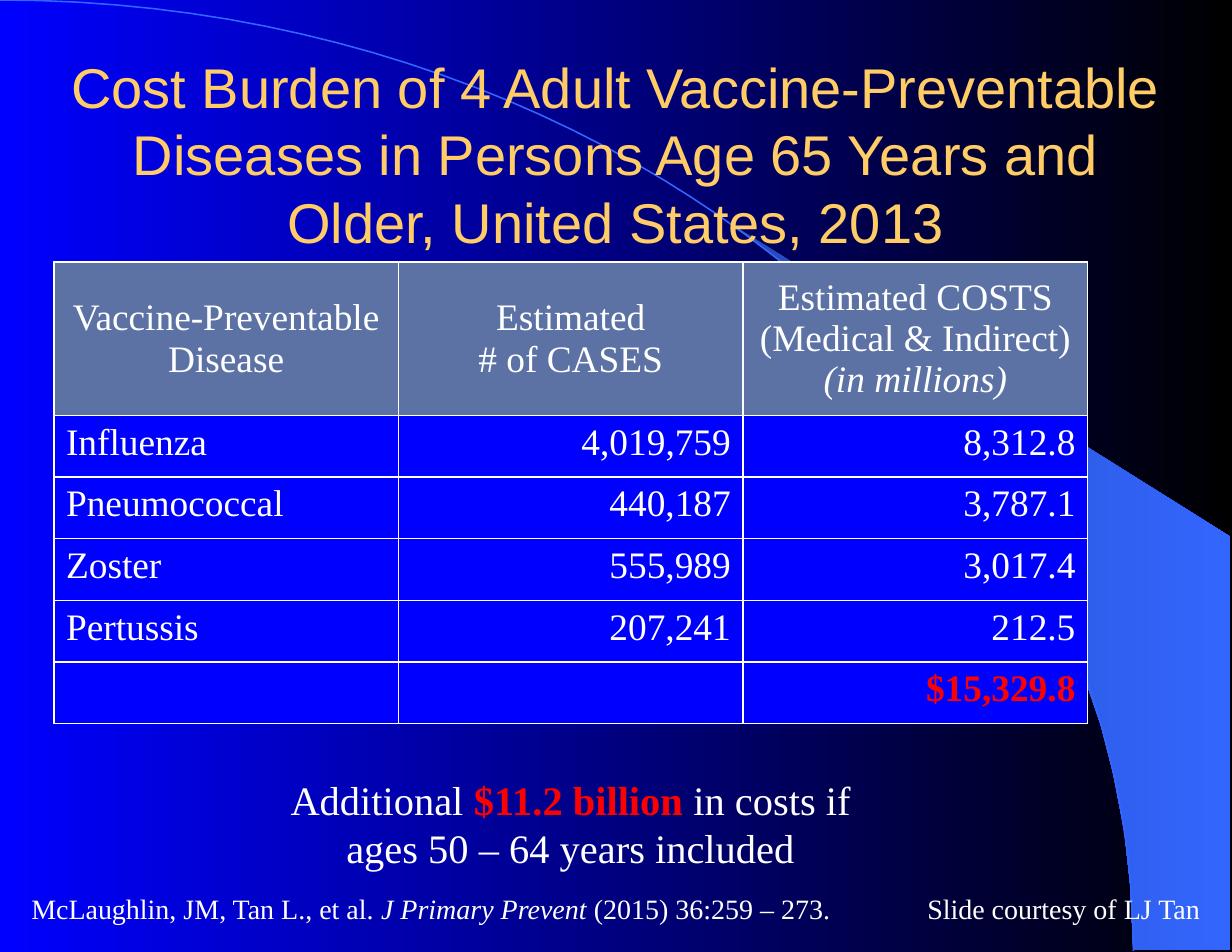
import pptx
import pptx.dml.color
import pptx.enum.text
import pptx.oxml
import pptx.oxml.ns
import pptx.util

Pt = pptx.util.Pt
ALIGN = pptx.enum.text.PP_ALIGN
ANCHOR = pptx.enum.text.MSO_ANCHOR

THEME = {
    "title_font": "Arial", "body_font": "Times New Roman",
    "title_size": 36, "table_size": 24, "note_size": 26, "citation_size": 18,
    "title": "FFCC66", "text": "FFFFFF", "accent": "FF0000", "border": "FFFFFF",
    "header": "5C72A5", "row": "0000FF", "arc": "3366FF",
    "background": ("0000FF", "000000"), "sweep": ("2449B6", "3366FF"),
}
STRONG = {"bold": True, "color": THEME["accent"]}
ITALIC = {"italic": True}

# A paragraph is a list of runs: plain text, or (text, format)
TITLE = [["Cost Burden of 4 Adult Vaccine-Preventable Diseases in Persons "
          "Age 65 Years and Older, United States, 2013"]]
HEADERS = [
    [["Vaccine-Preventable Disease"]],
    [["Estimated"], ["# of CASES"]],
    [["Estimated COSTS"], ["(Medical & Indirect)"], [("(in millions)", ITALIC)]],
]
DISEASES = [
    ("Influenza", "4,019,759", "8,312.8"),
    ("Pneumococcal", "440,187", "3,787.1"),
    ("Zoster", "555,989", "3,017.4"),
    ("Pertussis", "207,241", "212.5"),
]
TOTAL = ("", "", ("$15,329.8", STRONG))
NOTE = [["Additional ", ("$11.2 billion ", STRONG), "in costs if"],
        ["ages 50 – 64 years included"]]
CITATION = [["McLaughlin, JM, Tan L., et al. ", ("J Primary Prevent ", ITALIC),
             "(2015) 36:259 – 273.\tSlide courtesy of LJ Tan"]]

# Places in points
SLIDE_SIZE = (792, 612)
TITLE_BOX = (34.6, 28.8, 722.2, 139.7)
TABLE_BOX = (34.6, 168.5, 664.6, 296.6)
HEADER_HEIGHT, ROW_HEIGHT = 98.6, 39.6
NOTE_BOX = (34.6, 494.6, 664.6, 71.3)
CITATION_BOX = (13, 569.5, 766.8, 28.8)
COURTESY_TAB = 576
INSETS = (7.9, 4.3)
ARC_CONTROLS = [(0, 0), (402.5, 0), (728.6, 273.6), (728.6, 611.3)]
SWEEP_POINTS = [
    (728.6, 610.6), (790.6, 610.6), (790.6, 344.9), (466.6, 141.8),
    (494.6, 162.7), (517, 180.7), (542.9, 203.8), (567.4, 228.2),
    (603.4, 269.3), (635.8, 313.2), (658.8, 351.4), (679.7, 391),
    (695.5, 430.6), (707.8, 466.6), (715.7, 497.5), (722.9, 535),
    (726.5, 568.1),
]


def rgb(value):
    return pptx.dml.color.RGBColor.from_string(value)


def write(frame, paragraphs, *, size, font=THEME["body_font"],
          color=THEME["text"], align=ALIGN.LEFT, tab=None):
    frame.word_wrap = True
    for index, runs in enumerate(paragraphs):
        paragraph = frame.add_paragraph() if index else frame.paragraphs[0]
        paragraph.alignment = align
        if tab:
            properties = paragraph._p.get_or_add_pPr()
            tabs = properties.makeelement(pptx.oxml.ns.qn("a:tabLst"), {})
            stop = tabs.makeelement(pptx.oxml.ns.qn("a:tab"),
                                    {"pos": str(Pt(tab)), "algn": "l"})
            tabs.append(stop)
            properties.append(tabs)
        for part in runs:
            text, style = part if isinstance(part, tuple) else (part, {})
            run = paragraph.add_run()
            run.text = text
            run.font.name, run.font.size = font, Pt(size)
            run.font.bold = style.get("bold", False)
            run.font.italic = style.get("italic", False)
            run.font.color.rgb = rgb(style.get("color", color))


def fill_gradient(fill, colors):
    fill.gradient()
    fill.gradient_angle = 0
    for position, (stop, color) in enumerate(zip(fill.gradient_stops, colors)):
        stop.color.rgb = rgb(color)
        stop.position = position


def bezier(controls, steps=48):
    """Return points along a cubic curve."""
    weights = (1, 3, 3, 1)
    points = []
    for step in range(steps + 1):
        t = step / steps
        points.append(tuple(
            sum(w * (1 - t) ** (3 - k) * t ** k * controls[k][axis]
                for k, w in enumerate(weights))
            for axis in (0, 1)))
    return points


def add_outline(slide, points, close):
    """Add a freeform behind the title."""
    scaled = [(Pt(x), Pt(y)) for x, y in points]
    builder = slide.shapes.build_freeform(*scaled[0])
    builder.add_line_segments(scaled[1:], close=close)
    shape = builder.convert_to_shape()
    shape.shadow.inherit = False
    slide.shapes.title._element.addprevious(shape._element)
    return shape


def set_insets(target):
    target.margin_left = target.margin_right = Pt(INSETS[0])
    target.margin_top = target.margin_bottom = Pt(INSETS[1])


def style_cell(cell, fill):
    set_insets(cell)
    properties = cell._tc.get_or_add_tcPr()
    for side in ("lnL", "lnR", "lnT", "lnB"):
        properties.append(pptx.oxml.parse_xml(
            f'<a:{side} {pptx.oxml.ns.nsdecls("a")} w="{Pt(1)}"><a:solidFill>'
            f'<a:srgbClr val="{THEME["border"]}"/></a:solidFill></a:{side}>'))
    cell.fill.solid()
    cell.fill.fore_color.rgb = rgb(fill)


def add_cost_table(slide):
    rows = [*DISEASES, TOTAL]
    table = slide.shapes.add_table(
        len(rows) + 1, len(HEADERS), *map(Pt, TABLE_BOX)).table
    table.first_row = table.horz_banding = False
    for row in table.rows:
        row.height = Pt(ROW_HEIGHT)
    table.rows[0].height = Pt(HEADER_HEIGHT)
    for column, header in enumerate(HEADERS):
        cell = table.cell(0, column)
        style_cell(cell, THEME["header"])
        cell.vertical_anchor = ANCHOR.MIDDLE
        write(cell.text_frame, header, size=THEME["table_size"], align=ALIGN.CENTER)
    for number, values in enumerate(rows, 1):
        for column, value in enumerate(values):
            cell = table.cell(number, column)
            style_cell(cell, THEME["row"])
            if value:
                write(cell.text_frame, [[value]], size=THEME["table_size"],
                      align=ALIGN.RIGHT if column else ALIGN.LEFT)


def main():
    deck = pptx.Presentation()
    deck.slide_width, deck.slide_height = map(Pt, SLIDE_SIZE)
    slide = deck.slides.add_slide(deck.slide_layouts[5])
    fill_gradient(slide.background.fill, THEME["background"])

    sweep = add_outline(slide, SWEEP_POINTS, close=True)
    fill_gradient(sweep.fill, THEME["sweep"])
    sweep.line.fill.background()
    arc = add_outline(slide, bezier(ARC_CONTROLS), close=False)
    arc.fill.background()
    arc.line.color.rgb = rgb(THEME["arc"])
    arc.line.width = Pt(1)

    title = slide.shapes.title
    title.left, title.top, title.width, title.height = map(Pt, TITLE_BOX)
    title.text_frame.auto_size = pptx.enum.text.MSO_AUTO_SIZE.NONE
    title.text_frame.vertical_anchor = ANCHOR.MIDDLE
    set_insets(title.text_frame)
    write(title.text_frame, TITLE, size=THEME["title_size"],
          font=THEME["title_font"], color=THEME["title"], align=ALIGN.CENTER)

    add_cost_table(slide)
    citation = slide.shapes.add_textbox(*map(Pt, CITATION_BOX))
    write(citation.text_frame, CITATION, size=THEME["citation_size"], tab=COURTESY_TAB)
    note = slide.shapes.add_textbox(*map(Pt, NOTE_BOX))
    write(note.text_frame, NOTE, size=THEME["note_size"], align=ALIGN.CENTER)
    deck.save("out.pptx")


if __name__ == "__main__":
    main()
